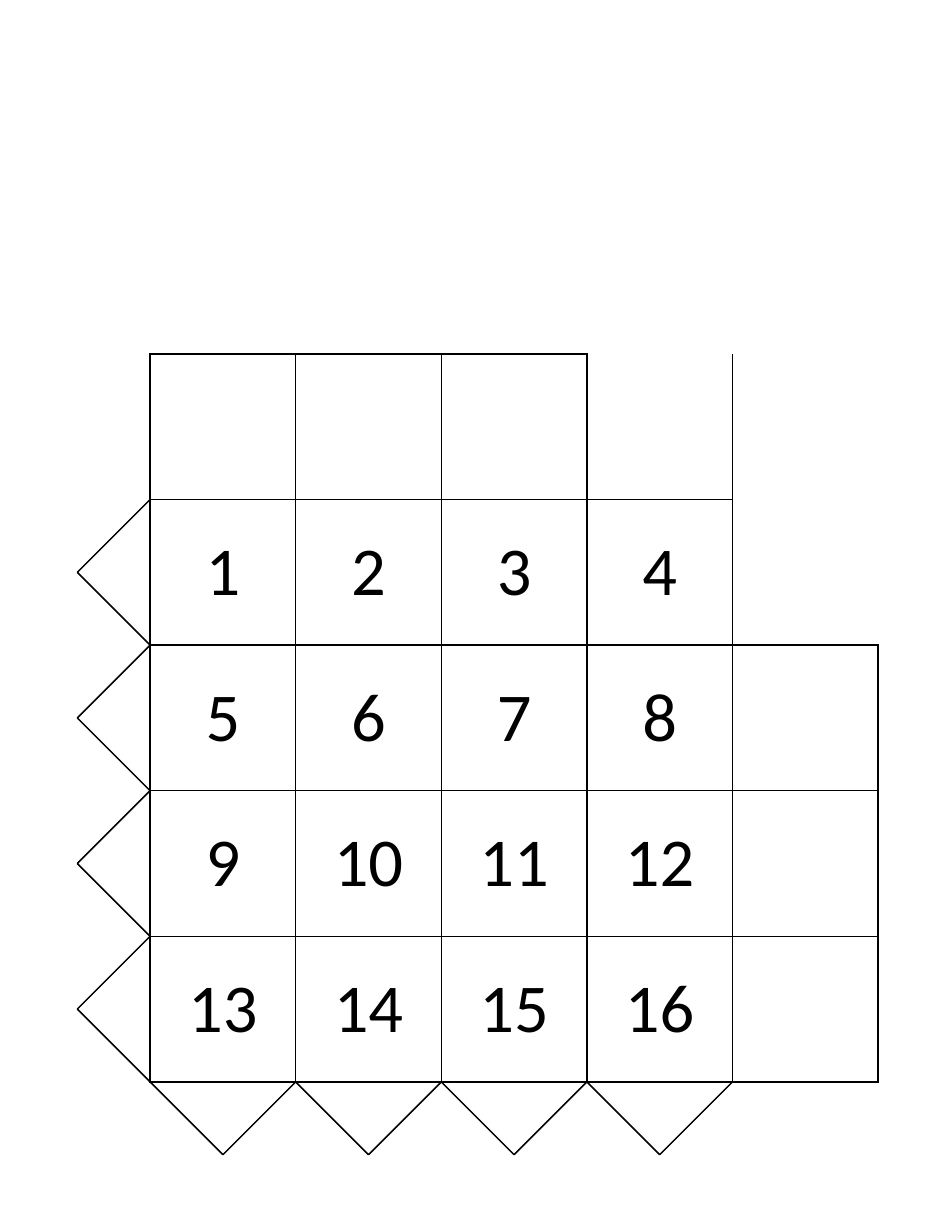
from lxml.etree import SubElement
from pptx import Presentation
from pptx.dml.color import RGBColor
from pptx.enum.shapes import MSO_SHAPE
from pptx.enum.text import MSO_ANCHOR, PP_ALIGN
from pptx.oxml.ns import qn
from pptx.util import Inches, Pt

INK = "000000"
COUNT = 5
NUMBERED = 4
SIZE = 1.3
LEFT, TOP = 1.34, 3.16
NUMBER_FORMAT = {"size": Pt(44), "name": "Calibri"}
# Cells whose borders differ from a full frame: the sides that are drawn
OPEN_CELLS = {(0, 3): "LRB", (0, 4): "L", (1, 4): "LB"}


def color(hex_value):
    return RGBColor.from_string(hex_value)


def set_borders(cell, sides):
    properties = cell._tc.get_or_add_tcPr()
    for side in "LRTB":
        line = SubElement(properties, qn(f"a:ln{side}"), w=str(Pt(1)))
        if side in sides:
            fill = SubElement(line, qn("a:solidFill"))
            SubElement(fill, qn("a:srgbClr"), val=str(color(INK)))
        else:
            SubElement(line, qn("a:noFill"))


presentation = Presentation()
presentation.slide_width = Inches(8.5)
presentation.slide_height = Inches(11)
slide = presentation.slides.add_slide(presentation.slide_layouts[6])

# Square grid
table = slide.shapes.add_table(
    COUNT, COUNT, Inches(LEFT), Inches(TOP), Inches(COUNT * SIZE), Inches(COUNT * SIZE)
).table
table.first_row = False
table.horz_banding = False
for index in range(COUNT):
    table.columns[index].width = Inches(SIZE)
    table.rows[index].height = Inches(SIZE)

# Borders, and the numbers 1 to 16 below the first row
for row in range(COUNT):
    for column in range(COUNT):
        cell = table.cell(row, column)
        set_borders(cell, OPEN_CELLS.get((row, column), "LRTB"))
        cell.fill.background()
        if row == 0 or column == NUMBERED:
            continue
        cell.vertical_anchor = MSO_ANCHOR.MIDDLE
        paragraph = cell.text_frame.paragraphs[0]
        paragraph.alignment = PP_ALIGN.CENTER
        run = paragraph.add_run()
        run.text = str((row - 1) * NUMBERED + column + 1)
        for name, value in NUMBER_FORMAT.items():
            setattr(run.font, name, value)
        run.font.color.rgb = color(INK)

# Triangle flaps along the bottom and the left side, by centre and rotation
bottom_flaps = [
    (LEFT + (index + 0.5) * SIZE, TOP + (COUNT + 0.25) * SIZE, 180)
    for index in range(NUMBERED)
]
left_flaps = [
    (LEFT - 0.25 * SIZE, TOP + (index + 1.5) * SIZE, 270) for index in range(NUMBERED)
]
for center_x, center_y, rotation in bottom_flaps + left_flaps:
    flap = slide.shapes.add_shape(
        MSO_SHAPE.ISOSCELES_TRIANGLE,
        Inches(center_x - SIZE / 2),
        Inches(center_y - SIZE / 4),
        Inches(SIZE),
        Inches(SIZE / 2),
    )
    flap.rotation = rotation
    flap.shadow.inherit = False
    flap.fill.background()
    flap.line.color.rgb = color(INK)
    flap.line.width = Pt(1)

presentation.save("out.pptx")
